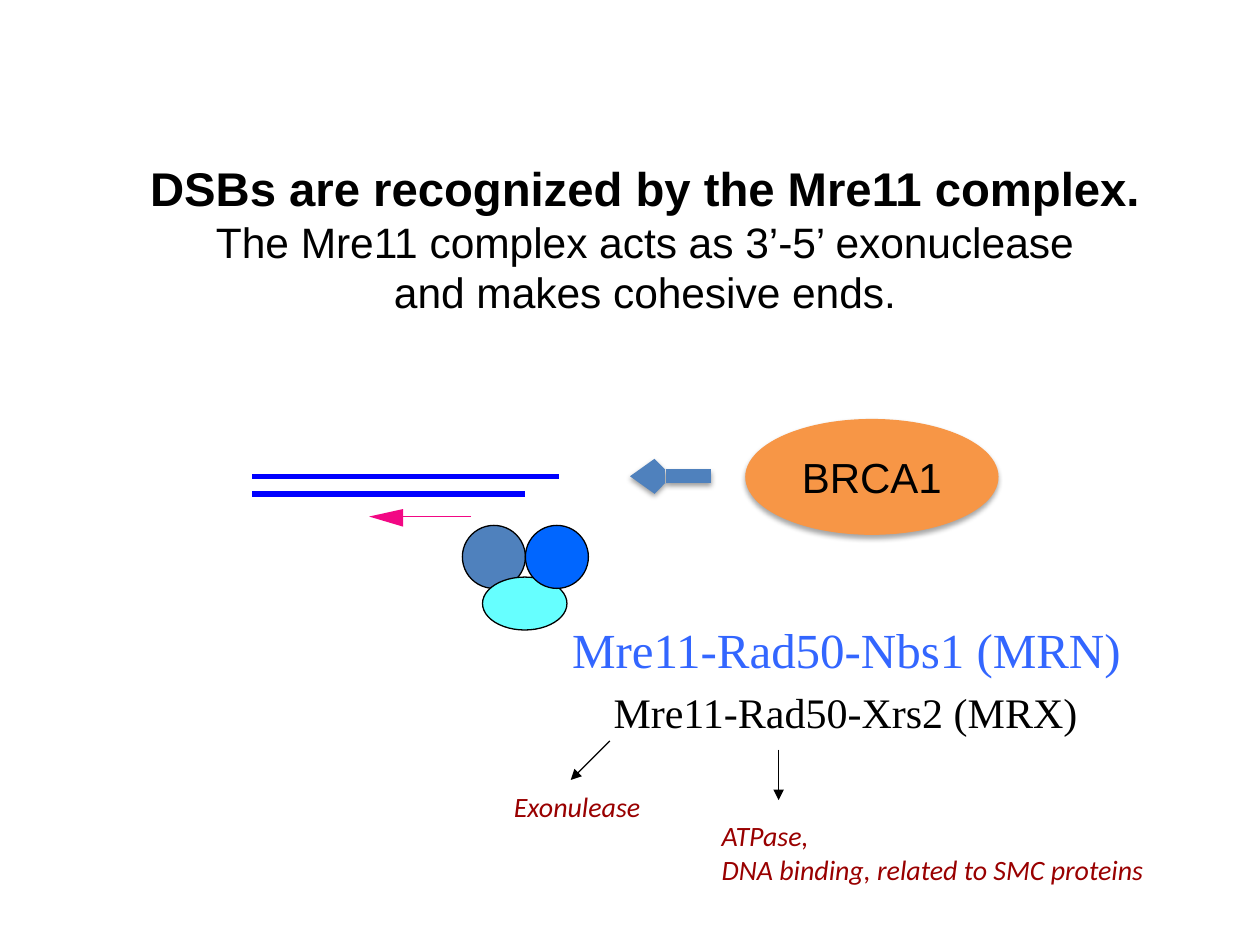
import pptx
import pptx.util
from pptx.dml.color import RGBColor
from pptx.enum.shapes import MSO_CONNECTOR, MSO_SHAPE
from pptx.enum.text import MSO_ANCHOR, PP_ALIGN
from pptx.oxml import parse_xml
from pptx.oxml.ns import nsdecls, qn

Inches, Pt = pptx.util.Inches, pptx.util.Pt

# Content: paragraphs are (text, size, bold)
TITLE = [("DSBs are recognized by the Mre11 complex.", 27, True),
         ("The Mre11 complex acts as 3’-5’ exonuclease", 24.3, False),
         ("and makes cohesive ends.", 24.3, False)]
# left, top, width, height, lines, font, size, colour, italic, inset
LABELS = [
    (4.54, 4.92, 4.4, 0.47, ["Mre11-Rad50-Nbs1 (MRN)"], "Times New Roman", 28, "3366FF", False, 0),
    (4.87, 5.45, 3.73, 0.4, ["Mre11-Rad50-Xrs2 (MRX)"], "Times New Roman", 24, "000000", False, 0),
    (3.98, 6.22, 1.23, 0.37, ["Exonulease"], "Calibri", 16, "990000", True, 0.1),
    (5.63, 6.45, 3.63, 0.64, ["ATPase,", "DNA binding, related to SMC proteins"],
     "Calibri", 16, "990000", True, 0.1),
]
# left, top, width, height, fill
SUBUNITS = [(3.67, 4.17, 0.5, 0.5, "4F81BD"),
            (3.83, 4.58, 0.67, 0.42, "66FFFF"),
            (4.17, 4.17, 0.5, 0.5, "0066FF")]
# x1, y1, x2, y2, colour, width, then arrowhead and its size if any
STRANDS = [(2, 3.78, 4.44, 3.78, "0000FF", 3),
           (2, 3.92, 4.17, 3.92, "0000FF", 3)]
RESECTION = (3.74, 4.1, 3.2, 4.1, "F20884", 1)
RESECTION_HEAD = [(2.93, 4.1), (3.2, 4.04), (3.2, 4.18)]
POINTERS = [(4.84, 5.88, 4.53, 6.19, "000000", 0.75, "triangle"),
            (6.18, 5.95, 6.18, 6.35, "000000", 0.75, "triangle")]
BRCA1_ARROW = (5.64, 3.78, 5, 3.78, "4F81BD", 8, "arrow", "sm")


def rgb(value):
    return RGBColor.from_string(value)


def add_shadow(shape, opacity, distance):
    """Replace the shape's effects with a soft shadow straight below."""
    sp_pr = shape._element.spPr
    for old in sp_pr.findall(qn("a:effectLst")):
        sp_pr.remove(old)
    sp_pr.append(parse_xml(
        f'<a:effectLst {nsdecls("a")}><a:outerShdw blurRad="{Pt(3.1)}" dist="{Pt(distance)}" '
        f'dir="5400000" rotWithShape="0"><a:srgbClr val="000000">'
        f'<a:alpha val="{opacity * 1000}"/></a:srgbClr></a:outerShdw></a:effectLst>'))


def add_line(x1, y1, x2, y2, color, width, head=None, size="med"):
    line = s.shapes.add_connector(MSO_CONNECTOR.STRAIGHT, *map(Inches, (x1, y1, x2, y2)))
    line.line.color.rgb = rgb(color)
    line.line.width = Pt(width)
    if head:
        line.line._get_or_add_ln().append(
            parse_xml(f'<a:tailEnd {nsdecls("a")} type="{head}" w="{size}" len="{size}"/>'))
    line._element.spPr.append(parse_xml(f'<a:effectLst {nsdecls("a")}/>'))
    return line


def add_ellipse(left, top, width, height, fill, outline="000000"):
    sp = s.shapes.add_shape(MSO_SHAPE.OVAL, *map(Inches, (left, top, width, height)))
    sp.shadow.inherit = False
    sp.fill.solid()
    sp.fill.fore_color.rgb = rgb(fill)
    sp.line.color.rgb = rgb(outline)
    sp.line.width = Pt(0.75)
    return sp


def style(p, text, font, size, color, bold=False, italic=False, align=PP_ALIGN.LEFT):
    p.text = text
    p.alignment = align
    p.font.name, p.font.size = font, Pt(size)
    p.font.bold, p.font.italic = bold, italic
    p.font.color.rgb = rgb(color)


def add_paragraphs(tf, count):
    return [tf.paragraphs[0]] + [tf.add_paragraph() for _ in range(count - 1)]


prs = pptx.Presentation()
prs.slide_width, prs.slide_height = Inches(10), Inches(7.5)
s = prs.slides.add_slide(prs.slide_layouts[6])

# Title
tf = s.shapes.add_textbox(*map(Inches, (0.62, 1.19, 9, 1.4))).text_frame
tf.word_wrap = True
tf.vertical_anchor = MSO_ANCHOR.MIDDLE
for p, (text, size, bold) in zip(add_paragraphs(tf, len(TITLE)), TITLE):
    style(p, text, "Arial", size, "000000", bold, align=PP_ALIGN.CENTER)

# DNA strands and the direction of resection
for strand in STRANDS:
    add_line(*strand)
add_line(*RESECTION)
corners = [(Inches(x), Inches(y)) for x, y in RESECTION_HEAD]
builder = s.shapes.build_freeform(*corners[0])
builder.add_line_segments(corners[1:], close=True)
head = builder.convert_to_shape()
head.shadow.inherit = False
head.fill.solid()
head.fill.fore_color.rgb = rgb(RESECTION[4])
head.line.fill.background()

# Mre11 complex
for subunit in SUBUNITS:
    add_ellipse(*subunit)

# Labels and their pointers
for left, top, width, height, lines, font, size, color, italic, inset in LABELS:
    tf = s.shapes.add_textbox(*map(Inches, (left, top, width, height))).text_frame
    tf.word_wrap = False
    tf.margin_left = tf.margin_right = Inches(inset)
    tf.margin_top = tf.margin_bottom = Inches(inset / 2)
    for p, text in zip(add_paragraphs(tf, len(lines)), lines):
        style(p, text, font, size, color, italic=italic)
for pointer in POINTERS:
    add_line(*pointer)

# BRCA1
brca1 = add_ellipse(5.92, 3.33, 2, 0.91, "F79646", "F79646")
add_shadow(brca1, 35, 1.8)
brca1.text_frame.vertical_anchor = MSO_ANCHOR.MIDDLE
style(brca1.text_frame.paragraphs[0], "BRCA1", "Arial", 24, "000000", align=PP_ALIGN.CENTER)
add_shadow(add_line(*BRCA1_ARROW), 38, 1.6)

prs.save("out.pptx")
